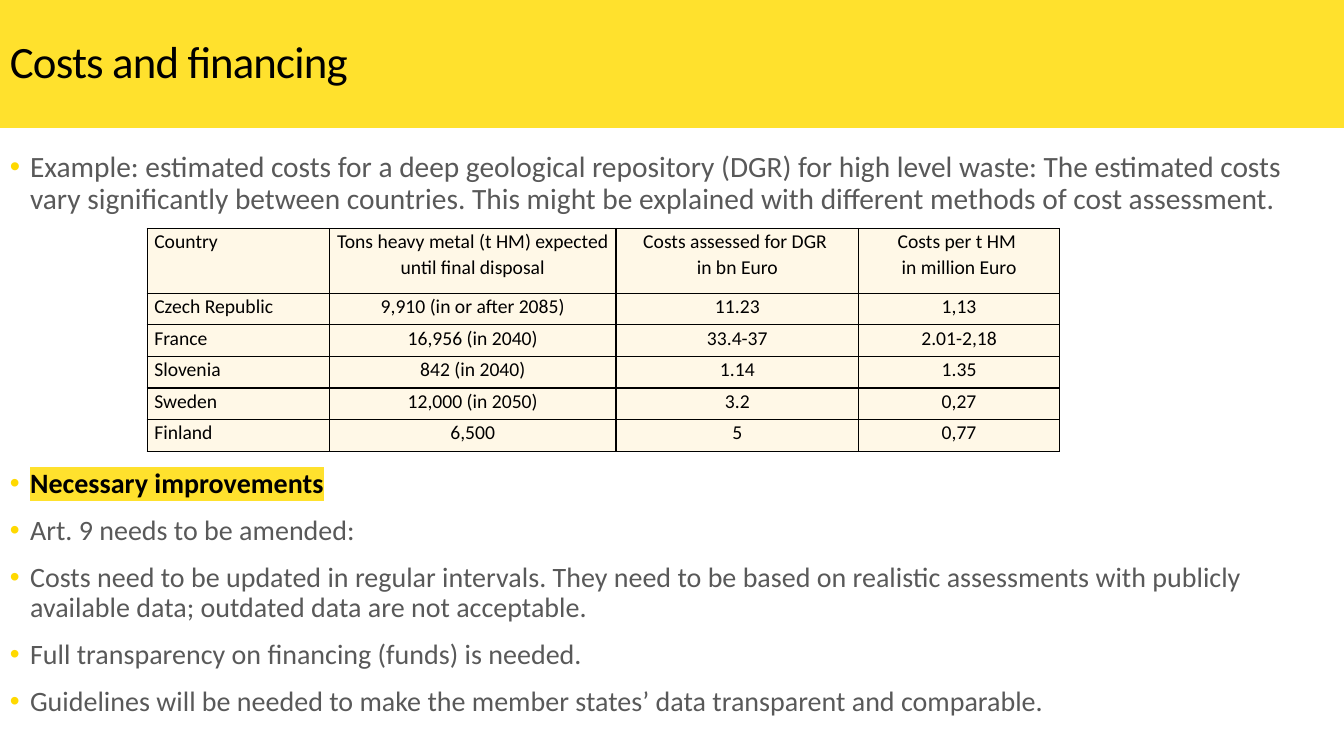
from copy import deepcopy
from pptx import Presentation
from pptx.dml.color import RGBColor
from pptx.enum.shapes import MSO_SHAPE
from pptx.enum.text import MSO_ANCHOR, PP_ALIGN
from pptx.oxml import parse_xml
from pptx.oxml.ns import nsdecls, qn
from pptx.util import Pt

NS = nsdecls("a")
YELLOW, CREAM, BLACK, GREY = "FFE12D", "FFF8E7", "000000", "595959"


def rgb(code):
    return RGBColor.from_string(code)


def write(par, text, size=20, color=BLACK, bold=False, align=PP_ALIGN.LEFT,
          line=0.9, before=0, after=0, bullet=False, mark=None, track=0):
    par.text = text
    if bullet:
        props = par._p.get_or_add_pPr()
        props.set("marL", str(Pt(14.4)))
        props.set("indent", str(-Pt(14.4)))
        for xml in (f'<a:buClr {NS}><a:srgbClr val="FFD900"/></a:buClr>',
                    f'<a:buFont {NS} typeface="Arial"/>',
                    f'<a:buChar {NS} char="•"/>'):
            props.append(parse_xml(xml))
    par.alignment = align
    par.line_spacing = line
    par.space_before, par.space_after = Pt(before), Pt(after)
    for run in par.runs:
        font = run.font
        font.name, font.size, font.bold = "Calibri", Pt(size), bold
        font.color.rgb = rgb(color)
        look = run._r.get_or_add_rPr()
        if track:
            look.set("spc", str(int(track * 100)))
        if mark:
            look.find(qn("a:latin")).addprevious(parse_xml(
                f'<a:highlight {NS}><a:srgbClr val="{mark}"/></a:highlight>'))
    for brk in par._p.findall(qn("a:br")):
        brk.append(deepcopy(look))


deck = Presentation()
deck.slide_width, deck.slide_height = Pt(960), Pt(540)
slide = deck.slides.add_slide(deck.slide_layouts[6])
shapes = slide.shapes

band = shapes.add_shape(MSO_SHAPE.RECTANGLE, 0, 0, Pt(960), Pt(91.4))
band.shadow.inherit = False
band.fill.solid()
band.fill.fore_color.rgb = rgb(YELLOW)
band.line.fill.background()
band.text_frame.vertical_anchor = MSO_ANCHOR.MIDDLE
write(band.text_frame.paragraphs[0], "Costs and financing", size=32, track=-0.6)

plain = dict(color=GREY, bullet=True)
intro = [
    ("Example: estimated costs for a deep geological repository (DGR) for high level waste: "
     "The estimated costs vary significantly between countries. "
     "This might be explained with different methods of cost assessment.",
     dict(plain, size=21)),
]
needs = [
    ("Necessary improvements", dict(bold=True, mark=YELLOW, bullet=True)),
    ("Art. 9 needs to be amended:", plain),
    ("Costs need to be updated in regular intervals. They need to be based on realistic "
     "assessments with publicly available data; outdated data are not acceptable.", plain),
    ("Full transparency on financing (funds) is needed.", plain),
    ("Guidelines will be needed to make the member states’ data transparent and comparable.",
     plain),
]
for top, high, items in ((109, 48, intro), (335, 182, needs)):
    frame = shapes.add_textbox(0, Pt(top), Pt(960), Pt(high)).text_frame
    frame.word_wrap = True
    frame.margin_top = frame.margin_bottom = 0
    for i, (text, style) in enumerate(items):
        par = frame.add_paragraph() if i else frame.paragraphs[0]
        write(par, text, before=12 if i else 0, **style)

rows = [
    ("Country", "Tons heavy metal (t HM) expected until final disposal",
     "Costs assessed for DGR \nin bn Euro", "Costs per t HM \nin million Euro"),
    ("Czech Republic", "9,910 (in or after 2085)", "11.23", "1,13"),
    ("France", "16,956 (in 2040)", "33.4-37", "2.01-2,18"),
    ("Slovenia", "842 (in 2040)", "1.14", "1.35"),
    ("Sweden", "12,000 (in 2050)", "3.2", "0,27"),
    ("Finland", "6,500", "5", "0,77"),
]
widths = (130.3, 204.5, 173.5, 143.3)
table = shapes.add_table(len(rows), len(widths), Pt(105.2), Pt(163.2),
                         Pt(sum(widths)), Pt(159)).table
table.first_row = table.horz_banding = False
for col, wide in zip(table.columns, widths):
    col.width = Pt(wide)
for r, row in enumerate(rows):
    table.rows[r].height = Pt(22.6 if r else 46.2)
    for c, text in enumerate(row):
        cell = table.cell(r, c)
        cell.margin_left = cell.margin_right = Pt(5)
        cell.margin_top = cell.margin_bottom = 0
        for side in "LRTB":
            cell._tc.get_or_add_tcPr().append(parse_xml(
                f'<a:ln{side} {NS} w="{Pt(1)}"><a:solidFill><a:srgbClr val="{BLACK}"/>'
                f'</a:solidFill></a:ln{side}>'))
        cell.fill.solid()
        cell.fill.fore_color.rgb = rgb(CREAM)
        write(cell.text_frame.paragraphs[0], text, size=14, line=1.07, after=8,
              align=PP_ALIGN.CENTER if c else PP_ALIGN.LEFT)

deck.save("out.pptx")
